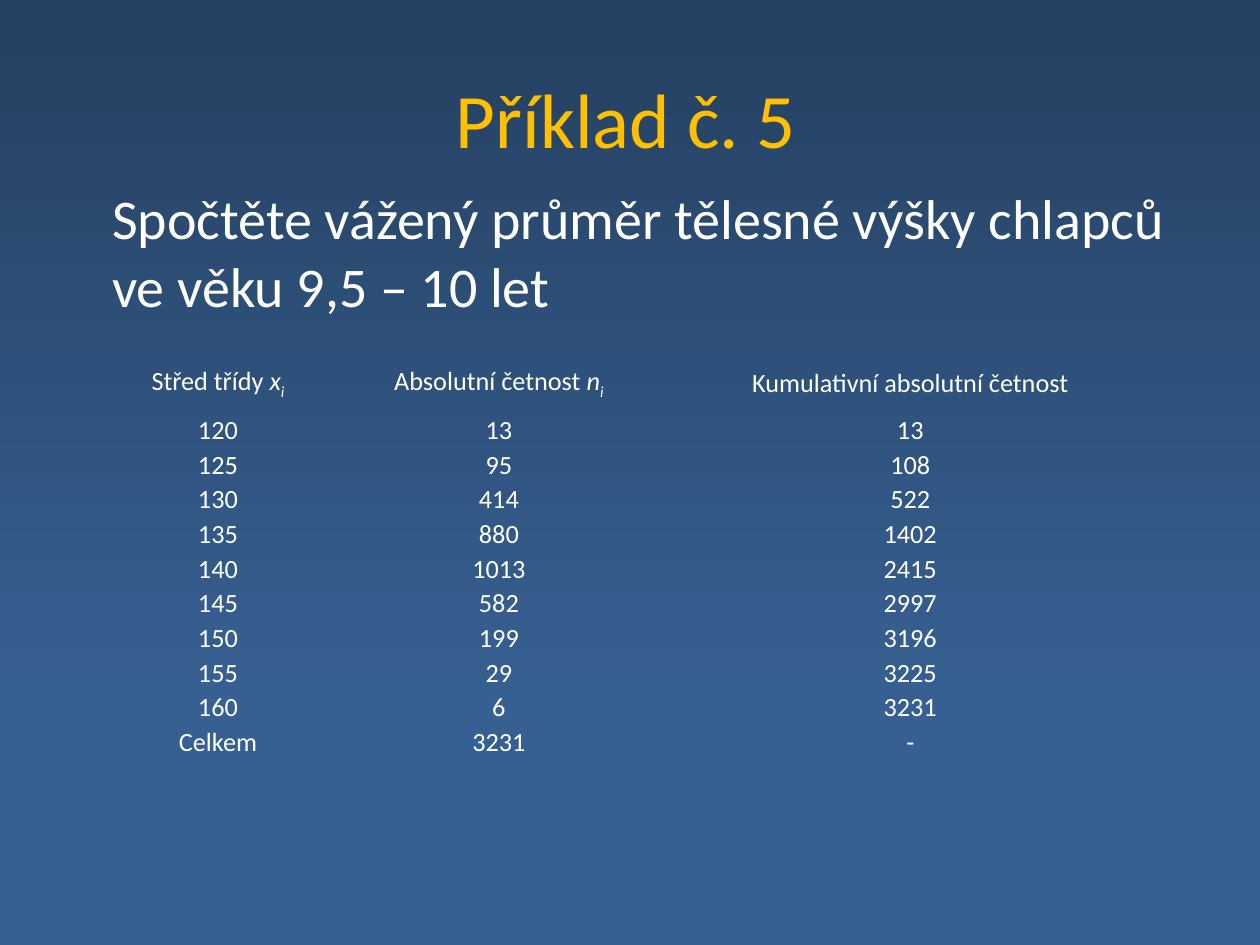
import itertools

import pptx
import pptx.dml.color
import pptx.enum.text
import pptx.util
from pptx.util import Inches

COLORS = {"top": "254061", "bottom": "376092", "title": "FFC000", "text": "FFFFFF"}
FONT = "Calibri"
NO_STYLE = "{2D5ABB26-0587-4C30-8999-92F81FD0307C}"

MIDPOINTS = range(120, 165, 5)
COUNTS = [13, 95, 414, 880, 1013, 582, 199, 29, 6]
# Each heading: plain words, then the symbol that carries the index i
HEADINGS = [
    ("Střed třídy ", "x"),
    ("Absolutní četnost ", "n"),
    ("Kumulativní absolutní četnost", ""),
]


def rgb(name):
    return pptx.dml.color.RGBColor.from_string(COLORS[name])


def format_para(para, size, color):
    para.font.name = FONT
    para.font.size = pptx.util.Pt(size)
    para.font.color.rgb = rgb(color)


def move_to(shape, box):
    shape.left, shape.top, shape.width, shape.height = map(Inches, box)


def paint_background(page):
    fill = page.background.fill
    fill.gradient()
    fill.gradient_angle = 270
    for stop, position, color in zip(fill.gradient_stops, (0, 0.75), ("top", "bottom")):
        stop.position = position
        stop.color.rgb = rgb(color)


def place_title(page, box, text):
    title = page.shapes.title
    move_to(title, box)
    title.text_frame.text = text
    title.text_frame.vertical_anchor = pptx.enum.text.MSO_ANCHOR.MIDDLE
    para = title.text_frame.paragraphs[0]
    para.alignment = pptx.enum.text.PP_ALIGN.CENTER
    format_para(para, 44, "title")


def place_task(page, box, text):
    body = page.placeholders[1]
    move_to(body, box)
    body.text_frame.text = text
    body.text_frame.auto_size = pptx.enum.text.MSO_AUTO_SIZE.NONE
    para = body.text_frame.paragraphs[0]
    format_para(para, 32, "text")
    # Indented text without a bullet
    properties = para._p.get_or_add_pPr()
    properties.set("marL", str(Inches(0.56)))
    properties.set("indent", "0")
    properties.insert(0, pptx.oxml.parse_xml(
        '<a:buNone xmlns:a="http://schemas.openxmlformats.org/drawingml/2006/main"/>'))


def write_heading(para, words, symbol):
    para.add_run().text = words
    if symbol:
        for text in (symbol, "i"):
            span = para.add_run()
            span.text = text
            span.font.italic = True
        span.font._element.set("baseline", "-25000")


def place_table(page, box, widths, header_height, row_height):
    rows = list(zip(MIDPOINTS, COUNTS, itertools.accumulate(COUNTS)))
    rows.append(("Celkem", sum(COUNTS), "-"))
    table = page.shapes.add_table(len(rows) + 1, len(widths), *map(Inches, box)).table
    table.first_row = table.horz_banding = False
    table._tbl.tblPr[0].text = NO_STYLE

    for column, width in zip(table.columns, widths):
        column.width = Inches(width)
    for index, row in enumerate(table.rows):
        row.height = Inches(row_height if index else header_height)

    for index, row in enumerate(table.rows):
        for column, cell in enumerate(row.cells):
            cell.fill.background()
            cell.vertical_anchor = pptx.enum.text.MSO_ANCHOR.MIDDLE
            cell.margin_left = cell.margin_right = Inches(0.08)
            cell.margin_top = cell.margin_bottom = Inches(0.01)
            para = cell.text_frame.paragraphs[0]
            para.alignment = pptx.enum.text.PP_ALIGN.CENTER
            format_para(para, 15, "text")
            if index == 0:
                write_heading(para, *HEADINGS[column])
            else:
                para.add_run().text = str(rows[index - 1][column])


def main():
    deck = pptx.Presentation()
    deck.slide_width, deck.slide_height = Inches(10), Inches(7.5)
    page = deck.slides.add_slide(deck.slide_layouts[1])

    paint_background(page)
    place_title(page, (0.47, 0.31, 9, 1.25), "Příklad č. 5")
    place_task(page, (0.23, 1.41, 9.5, 5.47),
               "Spočtěte vážený průměr tělesné výšky chlapců ve věku 9,5 – 10 let")
    place_table(page, (0.86, 2.81, 8.27, 3.17), (1.74, 2.72, 3.81), 0.47, 0.27)

    deck.save("out.pptx")


if __name__ == "__main__":
    main()
